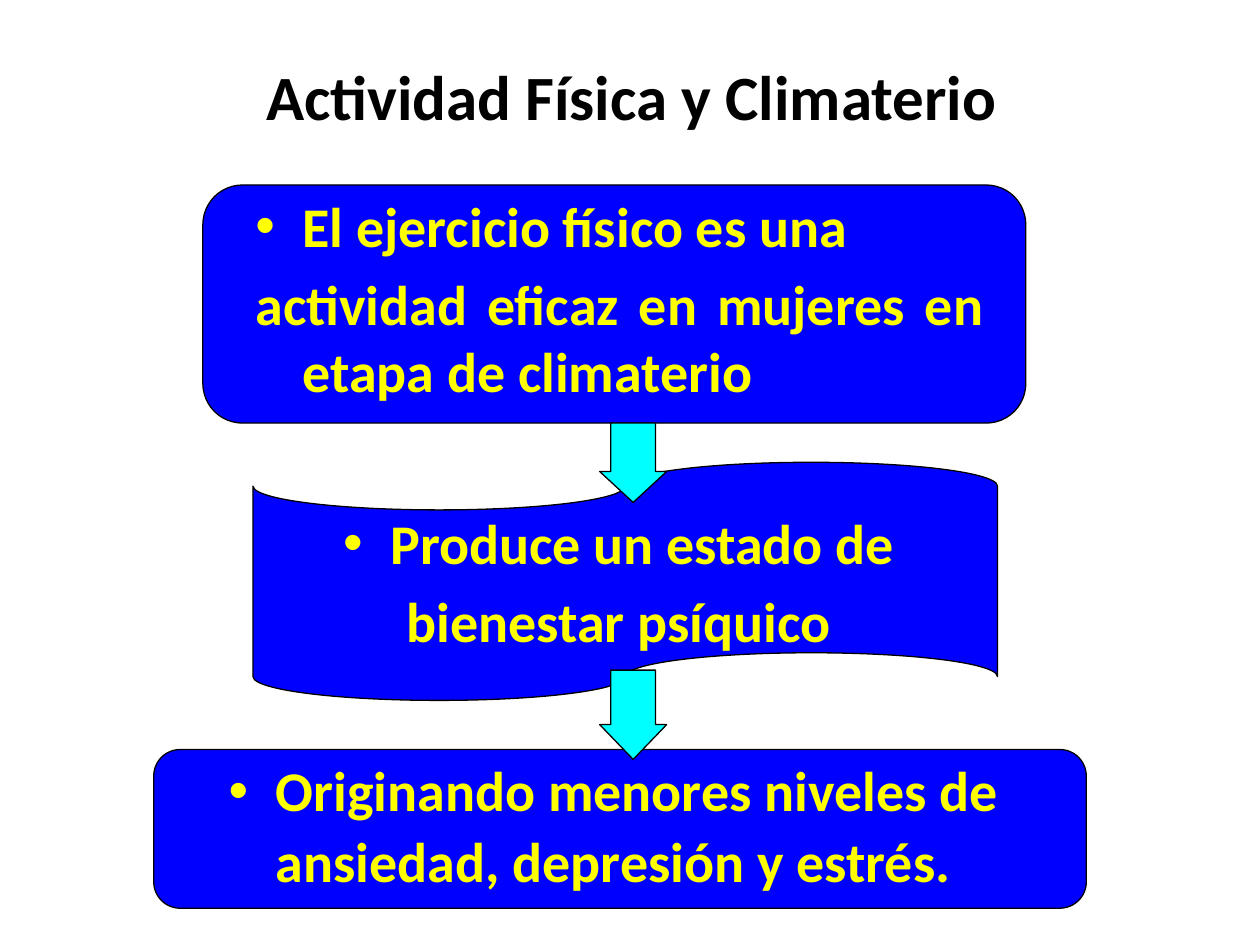
from lxml import etree
from pptx import Presentation
from pptx.dml.color import RGBColor
from pptx.enum.shapes import MSO_SHAPE as Shape
from pptx.enum.text import MSO_ANCHOR as Anchor, PP_ALIGN as Align
from pptx.oxml.ns import qn
from pptx.util import Cm, Pt

COLORS = {"title": "000000", "text": "FFFF00", "box": "0000FF",
          "arrow": "00FFFF", "outline": "000000"}
INDENT = Cm(0.95)


def write(frame, lines, size=32, color="text", align=Align.CENTER,
          anchor=Anchor.MIDDLE, wrap=True, spacing=None, bulleted=True):
    """Fill the frame; a bulleted text has its bullet on the first line only."""
    frame.word_wrap = wrap
    frame.vertical_anchor = anchor
    for index, line in enumerate(lines):
        paragraph = frame.paragraphs[0] if index == 0 else frame.add_paragraph()
        paragraph.alignment = align
        if spacing:
            paragraph.line_spacing = spacing
        if bulleted:
            paragraph.space_before = Pt(size * 0.2)
            properties = paragraph._p.get_or_add_pPr()
            properties.set("marL", str(INDENT))
            properties.set("indent", str(-INDENT))
            if index == 0:
                font = etree.SubElement(properties, qn("a:buFont"))
                font.set("typeface", "Arial")
                etree.SubElement(properties, qn("a:buChar")).set("char", "•")
        run = paragraph.add_run()
        run.text = line
        run.font.name = "Calibri"
        run.font.size = Pt(size)
        run.font.bold = True
        run.font.color.rgb = RGBColor.from_string(COLORS[color])


def add_outlined(slide, preset, box, fill):
    shape = slide.shapes.add_shape(preset, *(Cm(length) for length in box))
    shape.shadow.inherit = False
    shape.fill.solid()
    shape.fill.fore_color.rgb = RGBColor.from_string(COLORS[fill])
    shape.line.color.rgb = RGBColor.from_string(COLORS["outline"])
    shape.line.width = Pt(0.75)
    return shape


def add_title(slide, box, text):
    title = slide.shapes.title
    title.left, title.top, title.width, title.height = (Cm(n) for n in box)
    write(title.text_frame, [text], size=36, color="title", bulleted=False)


def add_premise(slide, box, lines):
    """Rounded box with a justified text area laid over it."""
    add_outlined(slide, Shape.FLOWCHART_ALTERNATE_PROCESS, box, "box")
    left, top, width, _ = box
    area = slide.shapes.add_textbox(Cm(left + 0.81), Cm(top),
                                    Cm(width - 1.4), Cm(13.28))
    write(area.text_frame, lines, align=Align.JUSTIFY, anchor=Anchor.TOP)


def add_effect(slide, preset, box, lines, spacing=None):
    effect = add_outlined(slide, preset, box, "box")
    write(effect.text_frame, lines, wrap=False, spacing=spacing)


def add_down_arrow(slide, box):
    """Arrow whose head takes a fixed share of its height."""
    arrow = add_outlined(slide, Shape.DOWN_ARROW, box, "arrow")
    _, _, width, height = box
    arrow.adjustments[0] = 0.67
    arrow.adjustments[1] = 0.39 * height / width


def main():
    deck = Presentation()
    deck.slide_width, deck.slide_height = Cm(25.4), Cm(19.05)
    slide = deck.slides.add_slide(deck.slide_layouts.get_by_name("Title Only"))

    add_title(slide, (1.3, 1.12, 22.86, 1.6), "Actividad Física y Climaterio")
    add_premise(slide, (4.09, 3.73, 16.59, 4.8),
                ["El ejercicio físico es una",
                 "actividad eficaz en mujeres en etapa de climaterio"])
    add_effect(slide, Shape.FLOWCHART_PUNCHED_TAPE, (5.1, 9.32, 15.01, 4.8),
               ["Produce un estado de ", "bienestar psíquico "])
    add_effect(slide, Shape.FLOWCHART_ALTERNATE_PROCESS,
               (3.1, 15.11, 18.8, 3.2),
               ["Originando menores niveles de ",
                "ansiedad, depresión y estrés. "], spacing=0.9)
    for top, height in ((8.53, 1.6), (13.51, 1.8)):
        add_down_arrow(slide, (12.09, top, 1.35, height))

    deck.save("out.pptx")


if __name__ == "__main__":
    main()
